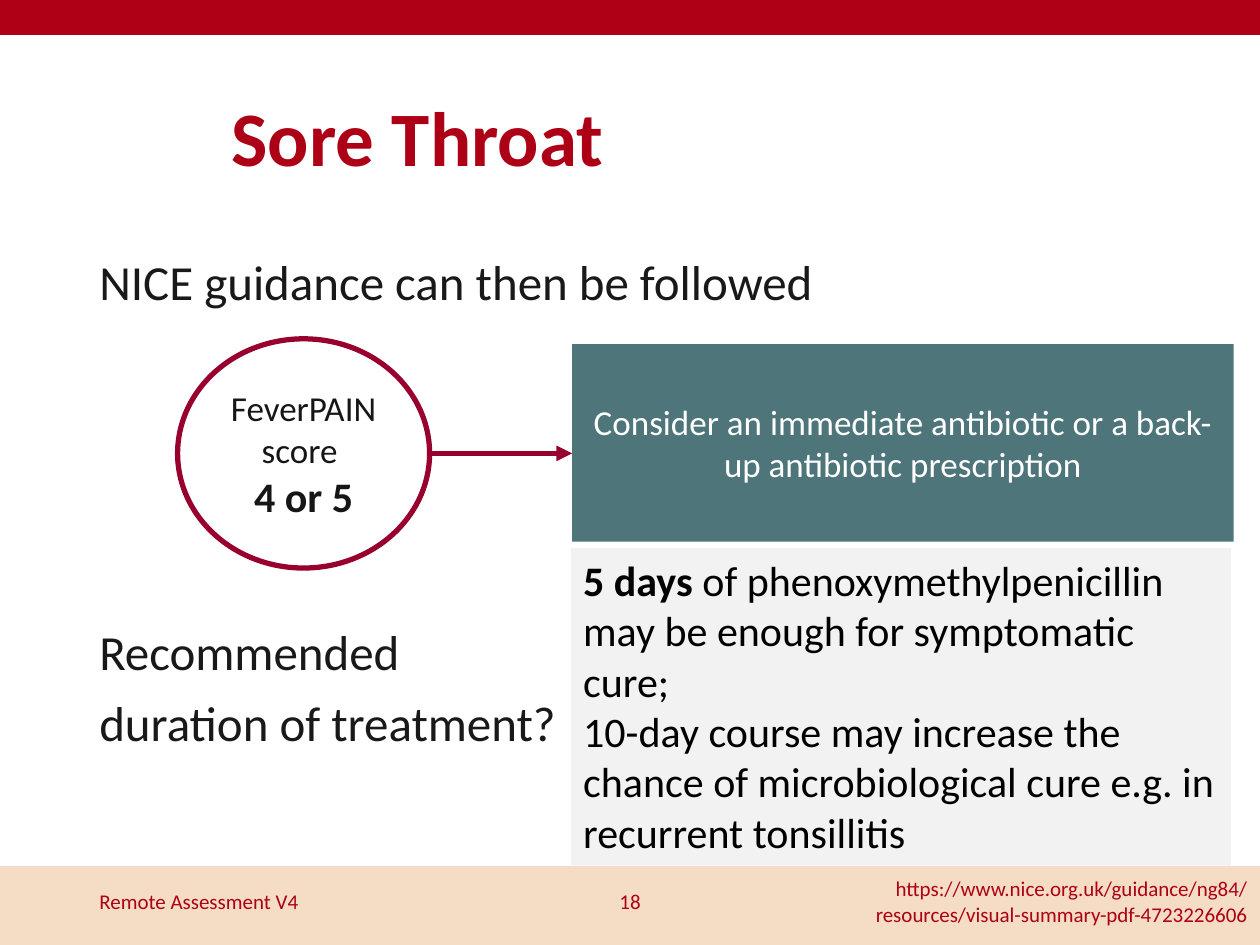
from lxml.etree import SubElement
from pptx import Presentation
from pptx.dml.color import RGBColor
from pptx.enum.shapes import MSO_CONNECTOR, MSO_SHAPE
from pptx.enum.text import MSO_ANCHOR, PP_ALIGN
from pptx.oxml.ns import qn
from pptx.util import Pt

FONT = "Calibri"
RED = "AD0016"
CRIMSON = "98002E"
PEACH = "F4DDC4"
TEAL = "4E757A"
PALE_GREY = "F2F2F2"
WHITE = "FFFFFF"
BLACK = "000000"
DARK_GREY = "191919"
SCORE_GREY = "161616"


def color(value):
    return RGBColor.from_string(value)


def write_text(shape, paragraphs, text_color, align=PP_ALIGN.LEFT,
               anchor=MSO_ANCHOR.TOP, line_spacing=None, space_before=0):
    frame = shape.text_frame
    frame.word_wrap = True
    frame.vertical_anchor = anchor
    for index, runs in enumerate(paragraphs):
        paragraph = frame.add_paragraph() if index else frame.paragraphs[0]
        paragraph.alignment = align
        if line_spacing:
            paragraph.line_spacing = line_spacing
        if index and space_before:
            paragraph.space_before = Pt(space_before)
        for text, size, bold in runs:
            run = paragraph.add_run()
            run.text = text
            run.font.name = FONT
            run.font.size = Pt(size)
            run.font.bold = bold
            run.font.color.rgb = color(text_color)


def add_text(slide, box, paragraphs, text_color, **options):
    shape = slide.shapes.add_textbox(*map(Pt, box))
    write_text(shape, paragraphs, text_color, **options)


def add_filled(slide, kind, box, fill, line=None, line_width=1):
    shape = slide.shapes.add_shape(kind, *map(Pt, box))
    shape.shadow.inherit = False
    shape.fill.solid()
    shape.fill.fore_color.rgb = color(fill)
    if line:
        shape.line.color.rgb = color(line)
        shape.line.width = Pt(line_width)
    else:
        shape.line.fill.background()
    return shape


def add_arrow(slide, start, end):
    connector = slide.shapes.add_connector(
        MSO_CONNECTOR.STRAIGHT, *map(Pt, start + end))
    connector.line.color.rgb = color(CRIMSON)
    connector.line.width = Pt(3)
    SubElement(connector.line._get_or_add_ln(), qn("a:tailEnd"), type="triangle")
    SubElement(connector._element.spPr, qn("a:effectLst"))


def add_header(slide, box):
    left, top, width, height = box
    add_filled(slide, MSO_SHAPE.RECTANGLE, (left, top, width, 20), RED, RED)
    add_text(slide, (left + 125.3, top + 29.3, 545, 104.4),
             [[("Sore Throat", 44, True)]], RED,
             anchor=MSO_ANCHOR.MIDDLE, line_spacing=0.9)


def add_footer(slide, box):
    left, top, width, height = box
    add_filled(slide, MSO_SHAPE.RECTANGLE, box, PEACH, PEACH)
    source = ("https://www.nice.org.uk/guidance/ng84/"
              "resources/visual-summary-pdf-4723226606")
    parts = [
        (49.7, 162, "Remote Assessment V4", PP_ALIGN.LEFT),
        (279, 162, "18", PP_ALIGN.CENTER),
        (476.6, 243.4, source, PP_ALIGN.RIGHT),
    ]
    for offset, part_width, text, align in parts:
        add_text(slide, (left + offset, top + 5, part_width, 29),
                 [[(text, 12, False)]], RED, align=align,
                 anchor=MSO_ANCHOR.MIDDLE)


def add_prompts(slide, box):
    left, top, width, height = box
    prompts = [
        (0, width, 39, ["NICE guidance can then be followed"]),
        (211.7, 280, 81.4, ["Recommended", "duration of treatment?"]),
    ]
    for offset, prompt_width, prompt_height, lines in prompts:
        add_text(slide, (left, top + offset, prompt_width, prompt_height),
                 [[(line, 28, False)] for line in lines], DARK_GREY,
                 line_spacing=0.9, space_before=10)


def add_duration(slide, box):
    shape = add_filled(slide, MSO_SHAPE.RECTANGLE, box, PALE_GREY)
    write_text(shape, [
        [("5 days ", 24, True),
         ("of phenoxymethylpenicillin may be enough for symptomatic cure;",
          24, False)],
        [("10-day course may increase the chance of microbiological cure "
          "e.g. in recurrent tonsillitis", 24, False)],
    ], BLACK)


def add_decision(slide, box):
    left, top, width, height = box
    score_width, score_height = 144, 131
    advice_left = left + 225.4
    centered = {"align": PP_ALIGN.CENTER, "anchor": MSO_ANCHOR.MIDDLE}
    score = add_filled(slide, MSO_SHAPE.OVAL,
                       (left, top, score_width, score_height),
                       WHITE, CRIMSON, 3)
    write_text(score, [[("FeverPAIN score ", 20, False)],
                       [("4 or 5", 24, True)]], SCORE_GREY, **centered)
    middle = top + score_height / 2
    add_arrow(slide, (left + score_width, middle), (advice_left, middle))
    advice = add_filled(slide, MSO_SHAPE.RECTANGLE,
                        (advice_left, top + 3, left + width - advice_left, 113),
                        TEAL)
    write_text(advice, [[("Consider an immediate antibiotic or a back-up "
                          "antibiotic prescription", 20, False)]],
               WHITE, **centered)


def main():
    presentation = Presentation()
    presentation.slide_width = Pt(720)
    presentation.slide_height = Pt(540)
    slide = presentation.slides.add_slide(presentation.slide_layouts[6])
    add_footer(slide, (0, 495.4, 720, 44.6))
    add_header(slide, (0, -0.5, 720, 134))
    add_prompts(slide, (49.7, 144, 620.6, 293))
    add_duration(slide, (326.2, 313.2, 377.3, 181.5))
    add_decision(slide, (101.5, 193.6, 603.4, 131))
    presentation.save("out.pptx")


if __name__ == "__main__":
    main()
